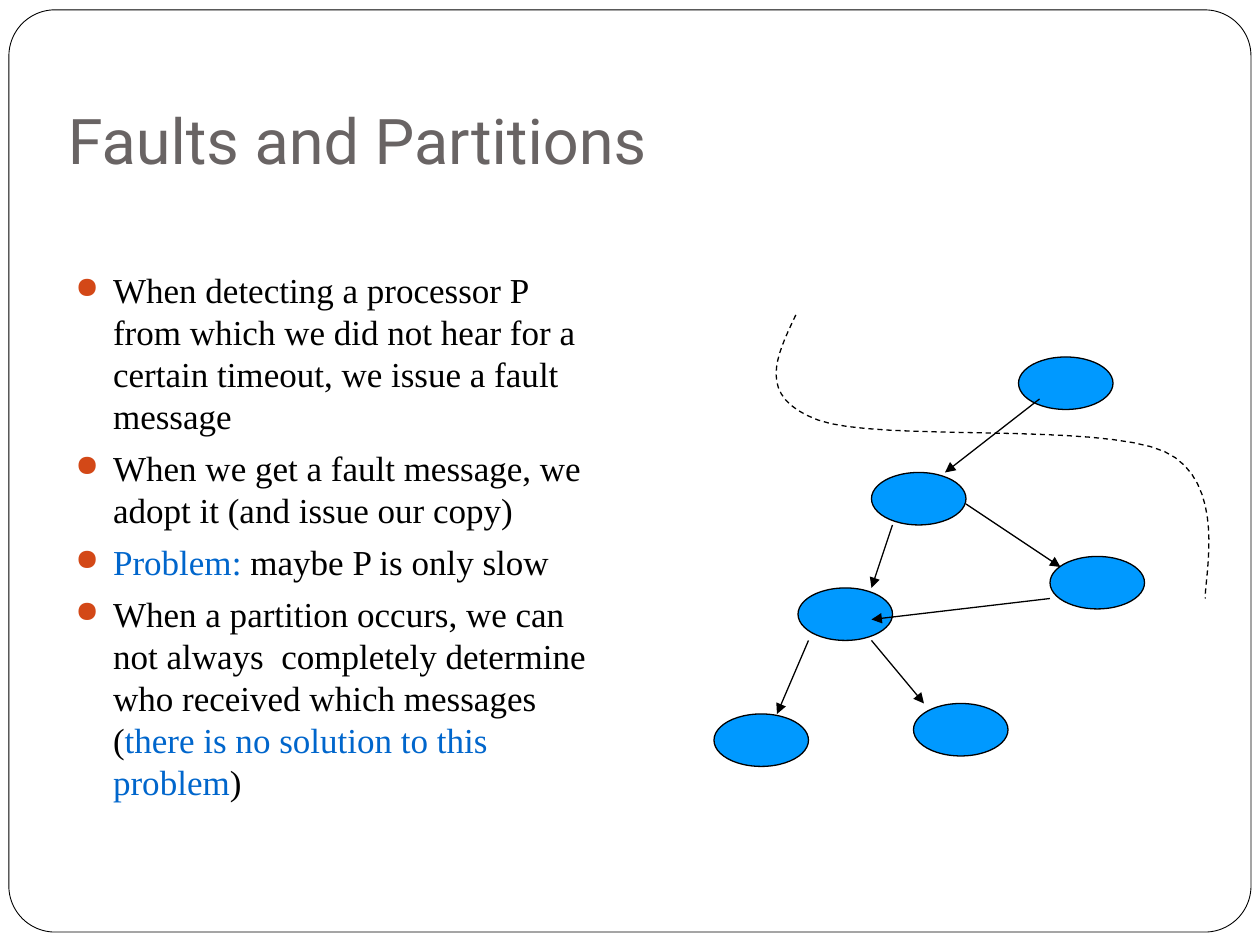
from lxml.etree import SubElement
from pptx import Presentation
from pptx.dml.color import RGBColor as RGB
from pptx.enum.dml import MSO_LINE_DASH_STYLE as DASH
from pptx.enum.shapes import MSO_CONNECTOR as CONN, MSO_SHAPE as SHAPE
from pptx.enum.text import MSO_ANCHOR as ANCHOR
from pptx.oxml.ns import qn
from pptx.util import Cm, Pt

TITLE = "Faults and Partitions"
BULLETS = [
    [("When detecting a processor P from which we did not hear for a certain "
      "timeout, we issue a fault message", "text")],
    [("When we get a fault message, we adopt it (and issue our copy)", "text")],
    [("Problem:", "accent"), (" maybe P is only slow", "text")],
    [("When a partition occurs, we can not always  completely determine "
      "who received which messages (", "text"),
     ("there is no solution to this problem", "accent"), (")", "text")],
]

GRID = 2.54 / 12
NODE_SIZE = (9, 5)
NODES = [(97, 34), (83, 45), (100, 53), (76, 56), (87, 67), (68, 68)]
ARROWS = [
    ((99, 38), (90, 45)), ((85, 50), (83, 56)), ((92, 48), (101, 54)),
    ((83, 61), (88, 67)), ((77, 61), (74, 68)), ((100, 57), (83, 59)),
]
PARTITION_START = (75.8, 30)
PARTITION_CURVES = [
    ((73.9, 34), (72, 37.8), (77.9, 40)),
    ((83.6, 42.1), (104.6, 40.2), (110.9, 43)),
    ((117, 45.8), (114.7, 55), (114.8, 57)),
]
CURVE_STEPS = 16

THEME = {
    "title": RGB(0x69, 0x64, 0x64), "text": RGB(0, 0, 0),
    "accent": RGB(0, 0x66, 0xCC), "bullet": "D34817",
    "node": RGB(0, 0x99, 0xFF), "paper": RGB(255, 255, 255),
    "line": RGB(0, 0, 0), "frame_width": Pt(0.5), "line_width": Pt(0.75),
    "title_font": "Roboto", "body_font": "Times New Roman",
    "title_size": Pt(36), "body_size": Pt(20),
    "leading": Pt(24), "gap": Pt(5.8),
}


def grid(*values):
    return [Cm(v * GRID) for v in values]


def style_line(line, width):
    line.color.rgb = THEME["line"]
    line.width = width


def add_outlined(shapes, kind, box, fill, width):
    s = shapes.add_shape(kind, *box)
    s.shadow.inherit = False
    s.fill.solid()
    s.fill.fore_color.rgb = fill
    style_line(s.line, width)
    return s


def add_text_frame(shapes, box):
    tf = shapes.add_textbox(*map(Cm, box)).text_frame
    tf.word_wrap = True
    return tf


def style_run(r, font, size, color):
    r.font.name, r.font.size, r.font.color.rgb = font, size, color


def add_bullet(p):
    pPr = p._p.get_or_add_pPr()
    pPr.set("marL", str(Cm(0.76)))
    pPr.set("indent", str(-Cm(0.76)))
    color = SubElement(pPr, qn("a:buClr"))
    SubElement(color, qn("a:srgbClr"), val=THEME["bullet"])
    SubElement(pPr, qn("a:buSzPct"), val="85000")
    SubElement(pPr, qn("a:buChar"), char="●")


def add_title(shapes):
    tf = add_text_frame(shapes, (1.12, 0.64, 21.59, 3.18))
    tf.vertical_anchor = ANCHOR.BOTTOM
    tf.margin_bottom = Cm(0.25)
    tf.text = TITLE
    style_run(tf.paragraphs[0].runs[0], THEME["title_font"],
              THEME["title_size"], THEME["title"])


def add_body(shapes):
    tf = add_text_frame(shapes, (1.27, 5.28, 11.15, 12.95))
    for i, parts in enumerate(BULLETS):
        p = tf.add_paragraph() if i else tf.paragraphs[0]
        p.space_before, p.line_spacing = THEME["gap"], THEME["leading"]
        add_bullet(p)
        for text, role in parts:
            r = p.add_run()
            r.text = text
            style_run(r, THEME["body_font"], THEME["body_size"], THEME[role])


def add_arrow(shapes, start, end):
    s = shapes.add_connector(CONN.STRAIGHT, *grid(*start, *end))
    style_line(s.line, THEME["line_width"])
    SubElement(s.line._get_or_add_ln(), qn("a:tailEnd"), type="triangle")
    SubElement(s._element.spPr, qn("a:effectLst"))


def bezier(a, b, c, d, t):
    u = 1 - t
    return tuple(u**3 * w + 3 * u * u * t * x + 3 * u * t * t * y + t**3 * z
                 for w, x, y, z in zip(a, b, c, d))


def add_partition(shapes):
    points, start = [], PARTITION_START
    for b, c, d in PARTITION_CURVES:
        points += [grid(*bezier(start, b, c, d, n / CURVE_STEPS))
                   for n in range(1, CURVE_STEPS + 1)]
        start = d
    builder = shapes.build_freeform(*grid(*PARTITION_START))
    builder.add_line_segments(points, close=False)
    s = builder.convert_to_shape()
    s.shadow.inherit = False
    s.fill.background()
    style_line(s.line, THEME["line_width"])
    s.line.dash_style = DASH.DASH


def main():
    """Build the slide on faults and partitions."""
    prs = Presentation()
    prs.slide_width, prs.slide_height = Cm(25.4), Cm(19.05)
    shapes = prs.slides.add_slide(prs.slide_layouts[6]).shapes
    frame = add_outlined(shapes, SHAPE.ROUNDED_RECTANGLE,
                         map(Cm, (0.18, 0.2, 25.04, 18.59)),
                         THEME["paper"], THEME["frame_width"])
    frame.adjustments[0] = 0.05
    add_title(shapes)
    add_body(shapes)
    for node in NODES:
        add_outlined(shapes, SHAPE.OVAL, grid(*node, *NODE_SIZE),
                     THEME["node"], THEME["line_width"])
    add_partition(shapes)
    for start, end in ARROWS:
        add_arrow(shapes, start, end)
    prs.save("out.pptx")


if __name__ == "__main__":
    main()
